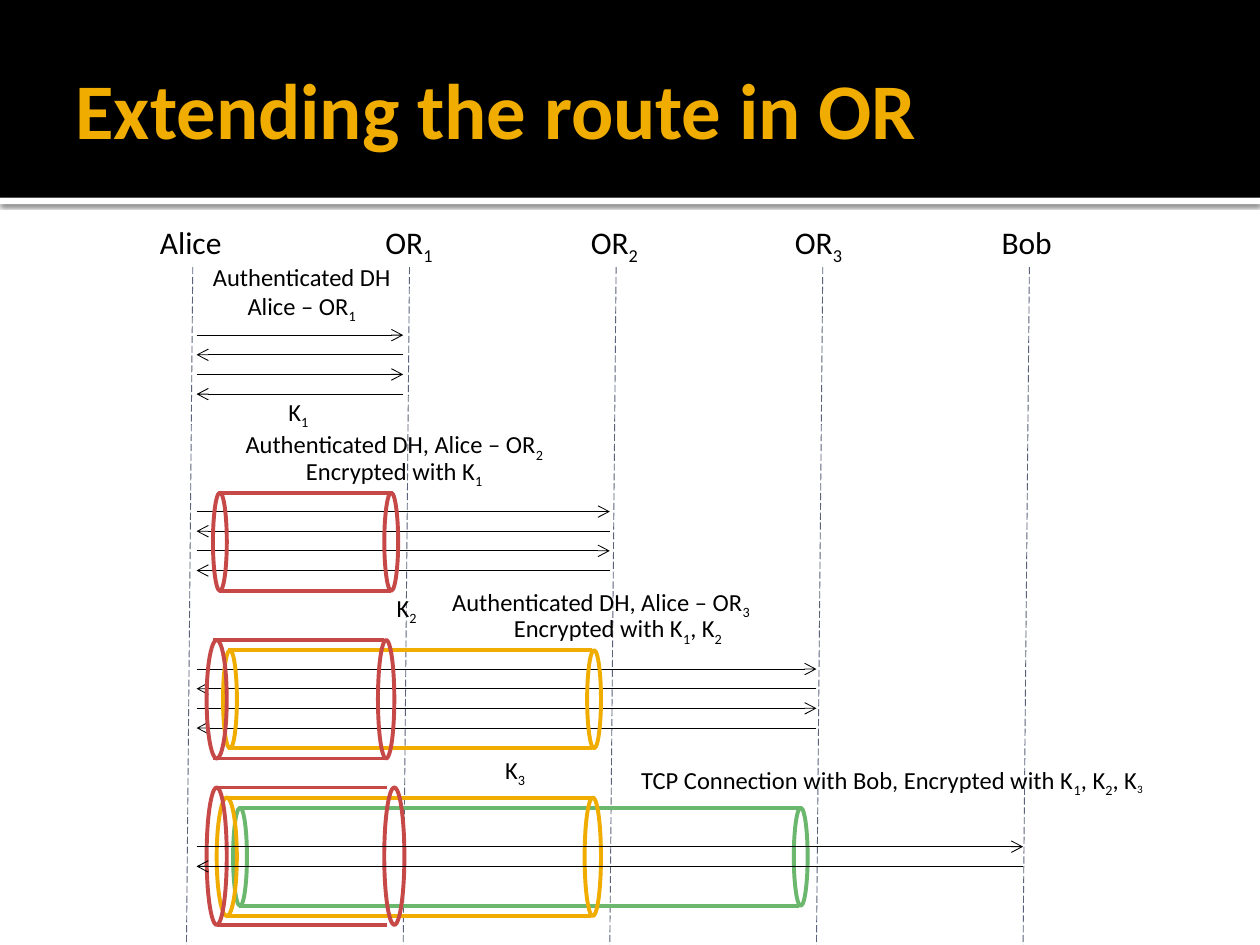
from lxml import etree
from pptx import Presentation
from pptx.dml.color import RGBColor
from pptx.enum.dml import MSO_LINE
from pptx.enum.shapes import MSO_CONNECTOR, MSO_SHAPE
from pptx.enum.text import MSO_ANCHOR, MSO_AUTO_SIZE, PP_ALIGN
from pptx.oxml.ns import qn
from pptx.util import Inches, Pt

BLACK = RGBColor(0x00, 0x00, 0x00)
WHITE = RGBColor(0xFF, 0xFF, 0xFF)
AMBER = RGBColor(0xF0, 0xAD, 0x00)
RED = RGBColor(0xC6, 0x48, 0x47)
GREEN = RGBColor(0x6B, 0xB7, 0x6D)
SLATE = RGBColor(0x5A, 0x63, 0x78)

RECTANGLE, OVAL = MSO_SHAPE.RECTANGLE, MSO_SHAPE.OVAL
STRAIGHT = MSO_CONNECTOR.STRAIGHT
LONG_DASH = MSO_LINE.LONG_DASH
MIDDLE = MSO_ANCHOR.MIDDLE
LEFT, CENTER = PP_ALIGN.LEFT, PP_ALIGN.CENTER
GROW, NO_AUTOSIZE = MSO_AUTO_SIZE.SHAPE_TO_FIT_TEXT, MSO_AUTO_SIZE.NONE

FONT = "Calibri"
SLIDE_WIDTH, SLIDE_HEIGHT = 10, 7.5
ALICE_X = 1.56      # where messages start beside Alice's lifeline
HOP_WIDTH = 1.64    # distance between neighbouring lifelines
MESSAGE_GAP = 0.156

# Label parts alternate between normal and subscript text
PARTIES = [  # parts, label left, label width, lifeline top x
    (["Alice"], 1.17, 0.71, 1.53),
    (["OR", "1"], 2.96, 0.61, 3.25),
    (["OR", "2"], 4.59, 0.62, 4.89),
    (["OR", "3"], 6.21, 0.61, 6.53),
    (["Bob"], 7.85, 0.62, 8.17),
]
MESSAGES = [  # hops, first y, number of messages
    (1, 2.66, 4),
    (2, 4.06, 4),
    (3, 5.31, 4),
    (4, 6.72, 2),
]
TUBES = [  # top, height, cap lefts, cap widths, side start and end, colour
    (3.91, 0.78, (1.69, 3.05), (0.11, 0.11), (1.74, 3.1), RED),
    (5.16, 0.78, (1.77, 4.66), (0.11, 0.11), (1.81, 4.7), AMBER),
    (5.08, 0.94, (1.64, 3.0), (0.16, 0.13), (1.69, 3.05), RED),
    (6.41, 0.78, (1.85, 6.3), (0.11, 0.11), (1.9, 6.34), GREEN),
    (6.33, 0.94, (1.72, 4.64), (0.16, 0.13), (1.8, 4.69), AMBER),
    (6.25, 1.09, (1.64, 3.05), (0.16, 0.16), (1.72, 3.07), RED),
]
NOTES = [  # left, top, width, parts
    (1.85, 3.36, 2.68, ["Authenticated DH, Alice – OR", "2"]),
    (2.19, 3.1, 0.38, ["K", "1"]),
    (2.33, 3.57, 1.65, ["Encrypted with K", "1"]),
    (3.05, 4.66, 0.39, ["K", "2"]),
    (3.49, 4.61, 2.68, ["Authenticated DH, Alice – OR", "3"]),
    (3.98, 4.82, 1.96, ["Encrypted with K", "1", ", K", "2"]),
    (3.91, 5.94, 0.38, ["K", "3"]),
]


def set_format(target, values):
    for name, value in values.items():
        setattr(target, name, value)


def add_run(paragraph, text, size, color=BLACK, bold=None):
    run = paragraph.add_run()
    run.text = text
    set_format(run.font, {"name": FONT, "size": Pt(size), "bold": bold})
    run.font.color.rgb = color
    return run


def add_label(slide, box, lines, size, alignment=LEFT):
    shape = slide.shapes.add_textbox(*map(Inches, box))
    frame = shape.text_frame
    set_format(frame, {"word_wrap": False, "auto_size": GROW})
    for index, parts in enumerate(lines):
        paragraph = frame.add_paragraph() if index else frame.paragraphs[0]
        paragraph.alignment = alignment
        for position, text in enumerate(parts):
            run = add_run(paragraph, text, size)
            if position % 2:
                run._r.get_or_add_rPr().set("baseline", "-25000")
    return shape


def add_line(slide, start, end, color, width, dash=None, arrow=False):
    connector = slide.shapes.add_connector(STRAIGHT, *map(Inches, (*start, *end)))
    line = connector.line
    line.color.rgb = color
    set_format(line, {"width": Pt(width), "dash_style": dash})
    if arrow:
        etree.SubElement(line._get_or_add_ln(), qn("a:tailEnd"), type="arrow")
    etree.SubElement(connector._element.spPr, qn("a:effectLst"))


def add_band(slide, box, color):
    shape = slide.shapes.add_shape(RECTANGLE, *map(Inches, box))
    shape.shadow.inherit = False
    shape.fill.solid()
    shape.fill.fore_color.rgb = color
    shape.line.fill.background()
    return shape


def add_header(slide, height):
    # White strip with a soft shadow below the black band
    strip = add_band(slide, (0, height, SLIDE_WIDTH, 0.05), WHITE)
    effects = strip._element.spPr.find(qn("a:effectLst"))
    shadow = etree.SubElement(effects, qn("a:outerShdw"), blurRad=str(Pt(2.5)),
                              dist=str(Pt(0.8)), dir="5400000")
    color = etree.SubElement(shadow, qn("a:srgbClr"), val=str(BLACK))
    etree.SubElement(color, qn("a:alpha"), val="60000")
    band = add_band(slide, (0, 0, SLIDE_WIDTH, height), BLACK)

    # Title, brought in front of the bands
    title = slide.shapes.title
    band._element.addnext(title._element)
    set_format(title, {"left": Inches(0.5), "top": Inches(0.17),
                       "width": Inches(9), "height": Inches(1.37)})
    frame = title.text_frame
    set_format(frame, {"vertical_anchor": MIDDLE, "word_wrap": True,
                       "auto_size": NO_AUTOSIZE,
                       "margin_left": Inches(0.1), "margin_right": Inches(0.05),
                       "margin_top": Inches(0.05), "margin_bottom": Inches(0.05)})
    paragraph = frame.paragraphs[0]
    paragraph.alignment = LEFT
    add_run(paragraph, "Extending the route in OR", 45, AMBER, True)


def add_parties(slide, top):
    for parts, left, width, lifeline_x in PARTIES:
        add_label(slide, (left, top, width, 0.4), [parts], 18)
        add_line(slide, (lifeline_x, top + 0.4), (lifeline_x - 0.05, SLIDE_HEIGHT),
                 SLATE, 0.5, dash=LONG_DASH)


def add_messages(slide, hops, top, count):
    ends = [ALICE_X, ALICE_X + hops * HOP_WIDTH]
    for index in range(count):
        y = top + index * MESSAGE_GAP
        start, end = ends if index % 2 == 0 else reversed(ends)
        add_line(slide, (start, y), (end, y), BLACK, 0.5, arrow=True)


def add_tube(slide, top, height, cap_lefts, cap_widths, side, color):
    for left, width in zip(cap_lefts, cap_widths):
        cap = slide.shapes.add_shape(OVAL, *map(Inches, (left, top, width, height)))
        cap.shadow.inherit = False
        cap.fill.background()
        cap.line.color.rgb = color
        cap.line.width = Pt(2.25)
    for y in (top, top + height):
        add_line(slide, (side[0], y), (side[1], y), color, 2.25)


def add_notes(slide):
    add_label(slide, (1.56, 2.03, 1.67, 0.57),
              [["Authenticated DH"], ["Alice – OR", "1"]], 14, CENTER)
    for left, top, width, parts in NOTES:
        add_label(slide, (left, top, width, 0.34), [parts], 14)
    connection = add_label(
        slide, (4.99, 6.02, 4.38, 0.34),
        [["TCP Connection with Bob, Encrypted with K", "1", ", K", "2", ", K", "3"]], 14)
    connection.text_frame.paragraphs[0].runs[-1].font.size = Pt(11)


def main():
    presentation = Presentation()
    set_format(presentation, {"slide_width": Inches(SLIDE_WIDTH),
                              "slide_height": Inches(SLIDE_HEIGHT)})
    slide = presentation.slides.add_slide(presentation.slide_layouts[5])
    add_header(slide, 1.57)
    add_parties(slide, 1.72)

    # Key exchanges lie behind the tubes, the final connection in front
    for exchange in MESSAGES[:-1]:
        add_messages(slide, *exchange)
    for tube in TUBES:
        add_tube(slide, *tube)
    add_messages(slide, *MESSAGES[-1])
    add_notes(slide)
    presentation.save("out.pptx")


if __name__ == "__main__":
    main()
